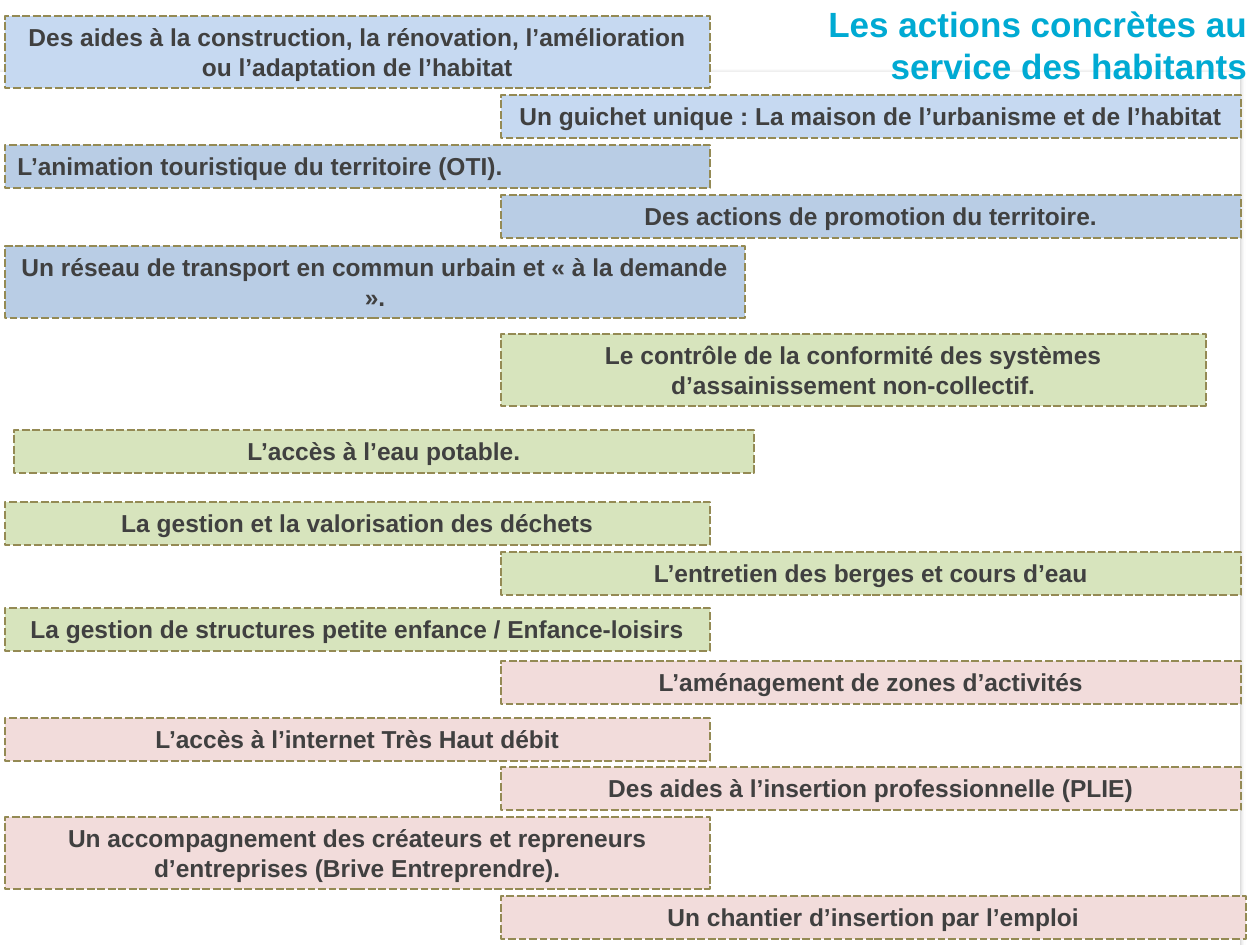
"""Build the slide listing concrete actions at the service of residents."""
import dataclasses

import lxml.etree
import pptx
import pptx.dml.color
import pptx.enum.dml
import pptx.enum.shapes
import pptx.enum.text
import pptx.oxml.ns
import pptx.presentation
import pptx.shapes.autoshape
import pptx.slide
import pptx.text.text
import pptx.util

PX = 914400 / 126
FONT = "Arial"
COLORS = {
    "panel": "FFFFFF",
    "shadow": "000000",
    "title": "00AAD3",
    "text": "404040",
    "border": "948A54",
    "housing": "C6D9F1",
    "mobility": "B9CDE5",
    "environment": "D7E4BD",
    "economy": "F2DCDB",
}
LEFT, RIGHT = 5, 501
NARROW, WIDE = 705, 740
ONE_LINE, TWO_LINES = 43, 72
CENTER = pptx.enum.text.PP_ALIGN.CENTER


@dataclasses.dataclass(frozen=True)
class Action:
    text: str
    theme: str
    left: int
    top: int
    width: int
    height: int = ONE_LINE
    alignment: pptx.enum.text.PP_ALIGN = CENTER


ACTIONS = [
    Action("Un chantier d’insertion par l’emploi", "economy", RIGHT, 896, 745),
    Action("Des aides à la construction, la rénovation, l’amélioration ou l’adaptation de l’habitat",
           "housing", LEFT, 16, NARROW, TWO_LINES),
    Action("Un accompagnement des créateurs et repreneurs d’entreprises (Brive Entreprendre).",
           "economy", LEFT, 817, NARROW, TWO_LINES),
    Action("Un guichet unique : La maison de l’urbanisme et de l’habitat", "housing", RIGHT, 95, WIDE),
    Action("Un réseau de transport en commun urbain et « à la demande ».",
           "mobility", LEFT, 246, WIDE, TWO_LINES),
    Action("Des aides à l’insertion professionnelle (PLIE)", "economy", RIGHT, 767, WIDE),
    Action("L’aménagement de zones d’activités", "economy", RIGHT, 661, WIDE),
    Action("L’animation touristique du territoire (OTI).", "mobility", LEFT, 145, NARROW,
           alignment=pptx.enum.text.PP_ALIGN.LEFT),
    Action("Des actions de promotion du territoire.", "mobility", RIGHT, 195, WIDE),
    Action("Le contrôle de la conformité des systèmes d’assainissement non-collectif.",
           "environment", RIGHT, 334, NARROW, TWO_LINES),
    Action("La gestion de structures petite enfance / Enfance-loisirs", "environment", LEFT, 608, NARROW),
    Action("L’accès à l’eau potable.", "environment", 14, 430, WIDE),
    Action("L’entretien des berges et cours d’eau", "environment", RIGHT, 552, WIDE),
    Action("La gestion et la valorisation des déchets", "environment", LEFT, 502, NARROW),
    Action("L’accès à l’internet Très Haut débit", "economy", LEFT, 718, NARROW),
]


def px(length: int) -> pptx.util.Emu:
    return pptx.util.Emu(round(length * PX))


def color(name: str) -> pptx.dml.color.RGBColor:
    return pptx.dml.color.RGBColor.from_string(COLORS[name])


def add_rectangle(slide: pptx.slide.Slide, left: int, top: int, width: int, height: int,
                  fill: str) -> pptx.shapes.autoshape.Shape:
    shape = slide.shapes.add_shape(pptx.enum.shapes.MSO_SHAPE.RECTANGLE,
                                   px(left), px(top), px(width), px(height))
    shape.shadow.inherit = False
    shape.fill.solid()
    shape.fill.fore_color.rgb = color(fill)
    return shape


def write_text(paragraph: pptx.text.text._Paragraph, text: str, size: int, color_name: str,
               alignment: pptx.enum.text.PP_ALIGN) -> None:
    paragraph.alignment = alignment
    run = paragraph.add_run()
    run.text = text
    run.font.name = FONT
    run.font.size = pptx.util.Pt(size)
    run.font.bold = True
    run.font.color.rgb = color(color_name)


def add_panel(slide: pptx.slide.Slide) -> None:
    panel = add_rectangle(slide, -130, 72, 1370, 903, "panel")
    panel.line.fill.background()
    qn = pptx.oxml.ns.qn
    effects = panel._element.spPr.find(qn("a:effectLst"))
    shadow = lxml.etree.SubElement(
        effects, qn("a:outerShdw"), blurRad=str(pptx.util.Pt(3.1)), dist=str(pptx.util.Pt(1.8)),
        dir="5400000", rotWithShape="0")
    tint = lxml.etree.SubElement(shadow, qn("a:srgbClr"), val=COLORS["shadow"])
    lxml.etree.SubElement(tint, qn("a:alpha"), val="35000")


def add_action(slide: pptx.slide.Slide, action: Action) -> None:
    box = add_rectangle(slide, action.left, action.top, action.width, action.height, action.theme)
    box.line.color.rgb = color("border")
    box.line.width = pptx.util.Pt(1.5)
    box.line.dash_style = pptx.enum.dml.MSO_LINE.SQUARE_DOT
    frame = box.text_frame
    frame.word_wrap = True
    frame.auto_size = pptx.enum.text.MSO_AUTO_SIZE.SHAPE_TO_FIT_TEXT
    frame.vertical_anchor = pptx.enum.text.MSO_ANCHOR.TOP
    write_text(frame.paragraphs[0], action.text, 14, "text", action.alignment)


def place_title(slide: pptx.slide.Slide) -> None:
    title = slide.shapes.title
    title.left, title.top, title.width, title.height = px(748), px(-24), px(512), px(136)
    title.text_frame.word_wrap = True
    title.text_frame.vertical_anchor = pptx.enum.text.MSO_ANCHOR.MIDDLE
    write_text(title.text_frame.paragraphs[0], "Les actions concrètes au service des habitants",
               20, "title", pptx.enum.text.PP_ALIGN.RIGHT)
    slide.shapes._spTree.append(title._element)


def main() -> None:
    presentation = pptx.Presentation()
    presentation.slide_width, presentation.slide_height = px(1260), px(945)
    slide = presentation.slides.add_slide(presentation.slide_layouts[5])
    add_panel(slide)
    for action in ACTIONS:
        add_action(slide, action)
    place_title(slide)
    presentation.save("out.pptx")


if __name__ == "__main__":
    main()
